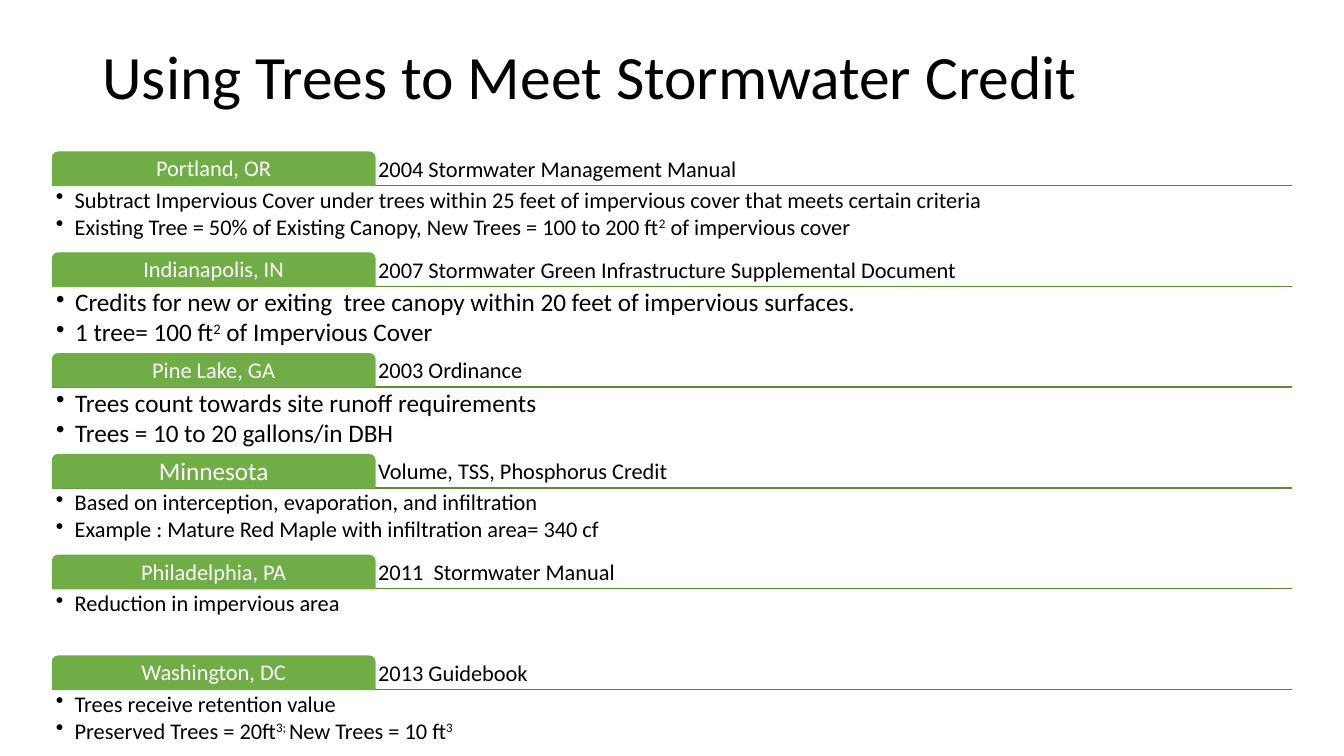
"""Build a slide listing how six places credit trees for stormwater."""
from lxml import etree
from pptx import Presentation
from pptx.dml.color import RGBColor
from pptx.enum.shapes import MSO_CONNECTOR, MSO_SHAPE
from pptx.enum.text import MSO_ANCHOR, MSO_AUTO_SIZE, PP_ALIGN
from pptx.oxml.ns import qn
from pptx.util import Pt

STRAIGHT = MSO_CONNECTOR.STRAIGHT
TAB_SHAPE = MSO_SHAPE.ROUND_2_SAME_RECTANGLE
TOP, MIDDLE, BOTTOM = MSO_ANCHOR.TOP, MSO_ANCHOR.MIDDLE, MSO_ANCHOR.BOTTOM
LEFT, CENTER = PP_ALIGN.LEFT, PP_ALIGN.CENTER
NO_AUTOFIT = MSO_AUTO_SIZE.NONE

BLACK = RGBColor(0x00, 0x00, 0x00)
WHITE = RGBColor(0xFF, 0xFF, 0xFF)
GREEN = RGBColor(0x70, 0xAD, 0x47)
DARK_GREEN = RGBColor(0x5A, 0x8B, 0x39)

ROW_LEFT, ROW_WIDTH = 37.5, 885.5
TAB_WIDTH, TAB_HEIGHT = 230.25, 23.75
FIRST_TOP, ROW_PITCH = 108.75, 72
DETAIL_HEIGHT = 47.5
BULLET_INDENT = 13.5

# Text between carets is superscript.
PROGRAMS = [
    ("Portland, OR", 16, "2004 Stormwater Management Manual", 16, [
        "Subtract Impervious Cover under trees within 25 feet of impervious cover that meets certain criteria",
        "Existing Tree = 50% of Existing Canopy, New Trees = 100 to 200 ft^2^ of impervious cover"]),
    ("Indianapolis, IN", 16, "2007 Stormwater Green Infrastructure Supplemental Document", 16, [
        "Credits for new or exiting  tree canopy within 20 feet of impervious surfaces.",
        "1 tree= 100 ft^2^ of Impervious Cover"], ),
    ("Pine Lake, GA", 16, "2003 Ordinance", 18, [
        "Trees count towards site runoff requirements",
        "Trees = 10 to 20 gallons/in DBH"]),
    ("Minnesota", 18, "Volume, TSS, Phosphorus Credit", 16, [
        "Based on interception, evaporation, and infiltration",
        "Example : Mature Red Maple with infiltration area= 340 cf"]),
    ("Philadelphia, PA", 16, "2011  Stormwater Manual", 16, [
        "Reduction in impervious area"]),
    ("Washington, DC", 16, "2013 Guidebook", 16, [
        "Trees receive retention value",
        "Preserved Trees = 20ft^3; ^New Trees = 10 ft^3"]),
]
PROGRAMS[1] = PROGRAMS[1][:3] + (18,) + PROGRAMS[1][4:]


def write_text(shape, lines, size, color=BLACK, anchor=TOP, align=LEFT, inset=None, bulleted=False):
    frame = shape.text_frame
    settings = {"word_wrap": True, "auto_size": NO_AUTOFIT, "vertical_anchor": anchor}
    if inset is not None:
        for side in ("left", "top", "right", "bottom"):
            settings[f"margin_{side}"] = Pt(inset)
    for name, value in settings.items():
        setattr(frame, name, value)
    for index, line in enumerate(lines):
        paragraph = frame.add_paragraph() if index else frame.paragraphs[0]
        paragraph_format = {"alignment": align, "line_spacing": 0.9,
                            "space_before": Pt(0), "space_after": Pt(2 if bulleted else 0),
                            "level": 1 if bulleted else 0}
        for name, value in paragraph_format.items():
            setattr(paragraph, name, value)
        if bulleted:
            properties = paragraph._p.get_or_add_pPr()
            properties.set("marL", str(Pt(BULLET_INDENT)))
            properties.set("indent", str(Pt(-BULLET_INDENT)))
            etree.SubElement(properties, qn("a:buChar")).set("char", "•")
        for part, text in enumerate(line.split("^")):
            if not text:
                continue
            run = paragraph.add_run()
            run.text = text
            for name, value in {"name": "Calibri", "size": Pt(size)}.items():
                setattr(run.font, name, value)
            run.font.color.rgb = color
            if part % 2:
                run._r.get_or_add_rPr().set("baseline", "30000")


presentation = Presentation()
presentation.slide_width, presentation.slide_height = Pt(960), Pt(540)
slide = presentation.slides.add_slide(presentation.slide_layouts[5])

title = slide.shapes.title
for name, value in {"left": 66, "top": 4.5, "width": 828, "height": 104.5}.items():
    setattr(title, name, Pt(value))
write_text(title, ["Using Trees to Meet Stormwater Credit"], 44, anchor=MIDDLE)

for row, (place, place_size, source, detail_size, details) in enumerate(PROGRAMS):
    top = FIRST_TOP + row * ROW_PITCH
    rule_top = top + TAB_HEIGHT

    rule = slide.shapes.add_connector(
        STRAIGHT, Pt(ROW_LEFT), Pt(rule_top), Pt(ROW_LEFT + ROW_WIDTH), Pt(rule_top))
    rule.line.color.rgb = DARK_GREEN
    rule.line.width = Pt(1)
    etree.SubElement(rule._element.spPr, qn("a:effectLst"))

    source_box = slide.shapes.add_textbox(
        Pt(ROW_LEFT + TAB_WIDTH), Pt(top), Pt(ROW_WIDTH - TAB_WIDTH), Pt(TAB_HEIGHT))
    write_text(source_box, [source], 16, anchor=BOTTOM, inset=2.4)

    tab = slide.shapes.add_shape(
        TAB_SHAPE, Pt(ROW_LEFT), Pt(top), Pt(TAB_WIDTH), Pt(TAB_HEIGHT))
    tab.shadow.inherit = False
    tab.fill.solid()
    tab.fill.fore_color.rgb = GREEN
    tab.line.color.rgb = GREEN
    tab.line.width = Pt(1)
    write_text(tab, [place], place_size, WHITE, MIDDLE, CENTER, inset=2.4)

    detail_box = slide.shapes.add_textbox(
        Pt(ROW_LEFT), Pt(rule_top), Pt(ROW_WIDTH), Pt(DETAIL_HEIGHT))
    write_text(detail_box, details, detail_size, inset=detail_size * 0.15, bulleted=True)

presentation.save("out.pptx")
